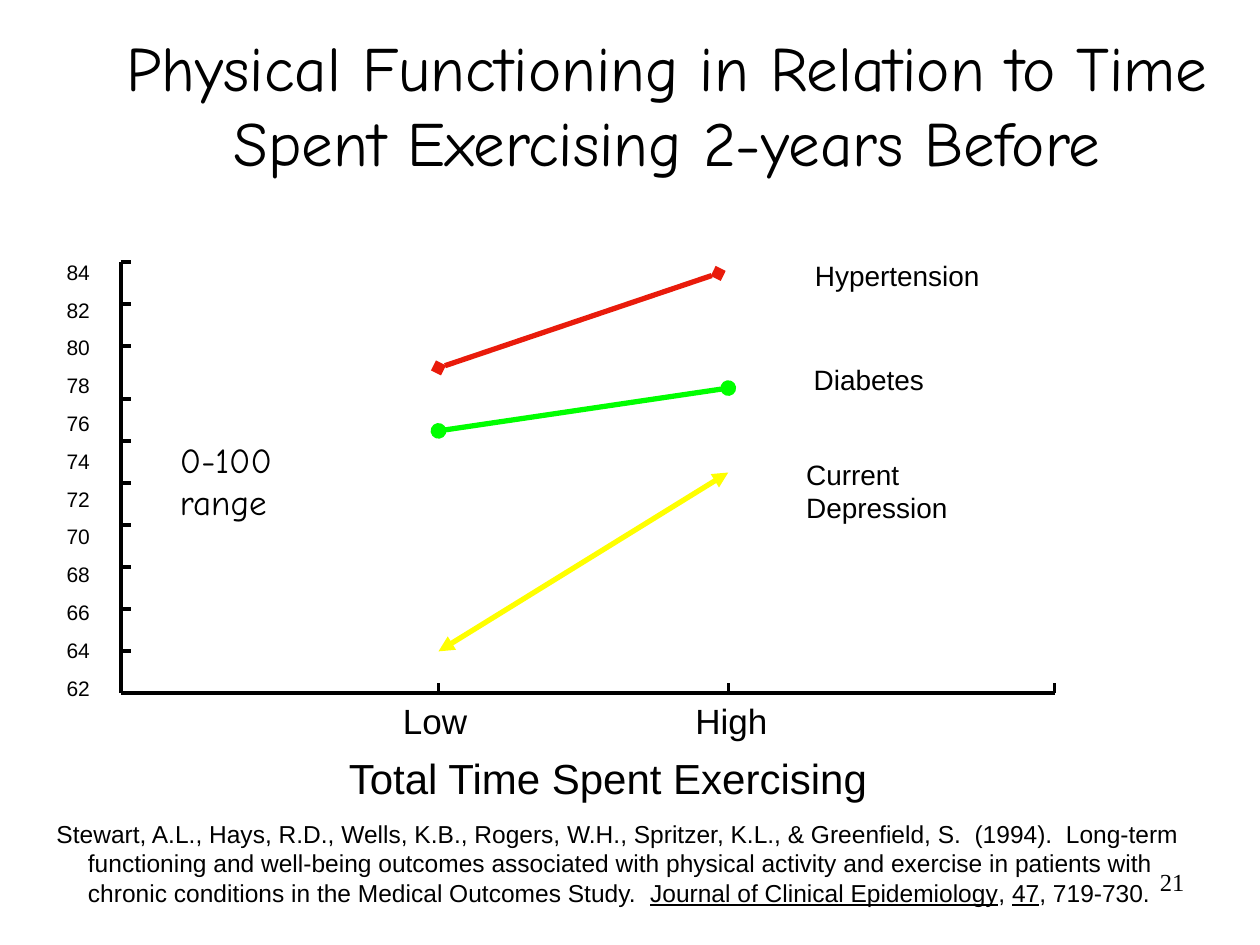
import pptx
import pptx.util
import pptx.dml.color
import pptx.enum.shapes
import pptx.enum.text
import pptx.oxml
import pptx.oxml.ns

Inches = pptx.util.Inches
Pt = pptx.util.Pt
ALIGN = pptx.enum.text.PP_ALIGN
ANCHOR = pptx.enum.text.MSO_ANCHOR

COLOURS = {
    "ink": "000000",
    "paper": "FFFFFF",
    "hypertension": "E91B0B",
    "diabetes": "00FF00",
    "depression": "FFFF00",
}

# Axis positions in inches
AXIS_LEFT, AXIS_RIGHT = 0.96, 8.37
AXIS_TOP, AXIS_BOTTOM = 2.08, 5.5
LOW, HIGH = 3.48, 5.78
TICK = 0.08
STEP = 1 / 3


def colour(name):
    return pptx.dml.color.RGBColor.from_string(COLOURS[name])


def write(box, paragraphs, size=16, font="Arial", align=ALIGN.LEFT, wrap=False,
          anchor=ANCHOR.TOP, spacing=None, hanging=0):
    """Fill a shape; each paragraph is a list of (text, underlined) spans."""
    frame = box.text_frame
    frame.word_wrap = wrap
    frame.vertical_anchor = anchor
    frame.auto_size = pptx.enum.text.MSO_AUTO_SIZE.NONE
    for index, spans in enumerate(paragraphs):
        para = frame.paragraphs[0] if index == 0 else frame.add_paragraph()
        para.alignment = align
        para.font.size = Pt(size)
        if spacing:
            para.line_spacing = spacing
        if hanging:
            properties = para._p.get_or_add_pPr()
            properties.set("marL", str(Inches(hanging)))
            properties.set("indent", str(-Inches(hanging)))
        for text, underlined in spans:
            for number, line in enumerate(text.split("\n")):
                if number:
                    para.add_line_break()
                if not line:
                    continue
                span = para.add_run()
                span.text = line
                span.font.size = Pt(size)
                span.font.name = font
                span.font.underline = underlined
                span.font.color.rgb = colour("ink")
        # Line breaks keep the height of the text around them
        for line_break in para._p.findall(pptx.oxml.ns.qn("a:br")):
            line_break.get_or_add_rPr().set("sz", str(size * 100)) if hasattr(
                line_break, "get_or_add_rPr") else line_break.append(
                pptx.oxml.parse_xml(
                    f'<a:rPr {pptx.oxml.ns.nsdecls("a")} sz="{size * 100}">'
                    f'<a:latin typeface="{font}"/></a:rPr>'))


def add_text(page, text, left, top, width, height, **style):
    box = page.shapes.add_textbox(
        Inches(left), Inches(top), Inches(width), Inches(height))
    paragraphs = [[(text, False)]] if isinstance(text, str) else text
    write(box, paragraphs, **style)


def add_line(page, start, end, name="ink", width=2, marker=None):
    line = page.shapes.add_connector(
        pptx.enum.shapes.MSO_CONNECTOR.STRAIGHT,
        *[Inches(value) for value in (*start, *end)])
    line.line.color.rgb = colour(name)
    line.line.width = Pt(width)
    namespace = pptx.oxml.ns.nsdecls("a")
    if marker:
        outline = line.line._get_or_add_ln()
        for tag in ("headEnd", "tailEnd"):
            outline.append(pptx.oxml.parse_xml(
                f'<a:{tag} {namespace} type="{marker}"/>'))
    line._element.spPr.append(pptx.oxml.parse_xml(f"<a:effectLst {namespace}/>"))


def add_title(page, text):
    title = page.shapes.title
    title.left, title.top = Inches(0.59), Inches(0.5)
    title.width, title.height = Inches(9.41), Inches(1.25)
    write(title, [[(text, False)]], size=36, font="Comic Neue",
          align=ALIGN.CENTER, anchor=ANCHOR.MIDDLE, wrap=True)


def add_axes(page):
    corner = (AXIS_LEFT, AXIS_BOTTOM)
    add_line(page, (AXIS_LEFT, AXIS_TOP), corner)
    add_line(page, corner, (AXIS_RIGHT, AXIS_BOTTOM))
    # Seven ticks rise from the bottom, three descend from the top
    ticks = [AXIS_BOTTOM - STEP * n for n in range(1, 8)]
    ticks += [AXIS_TOP + STEP * n for n in range(3)]
    for y in ticks:
        add_line(page, (AXIS_LEFT, y), (AXIS_LEFT + TICK, y))
    for x in (LOW, HIGH, AXIS_RIGHT):
        add_line(page, (x, AXIS_BOTTOM), (x, AXIS_BOTTOM - TICK))
    # Axis labels
    scale = [[(str(value), False)] for value in range(84, 60, -2)]
    add_text(page, scale, 0.43, 1.91, 0.39, 4.04, size=12, spacing=1.5)
    add_text(page, "Low", 3.1, 5.5, 0.76, 0.44, size=20)
    add_text(page, "High", 5.42, 5.5, 0.83, 0.44, size=20)
    add_text(page, "Total Time Spent Exercising", 2.67, 5.92, 4.68, 0.51, size=24)
    add_text(page, "0-100 range", 1.33, 3.43, 1.17, 0.77,
             size=20, font="Comic Neue", wrap=True)


def add_trends(page):
    trends = [
        ("hypertension", (LOW, 2.92), (5.7, 2.17), "diamond"),
        ("diabetes", (LOW, 3.42), (HIGH, 3.08), "oval"),
        ("depression", (LOW, 5.17), (HIGH, 3.75), "triangle"),
    ]
    for name, start, end, marker in trends:
        add_line(page, start, end, name, width=3, marker=marker)
    add_text(page, "Hypertension", 6.37, 2, 1.6, 0.36)
    add_text(page, "Diabetes", 6.36, 2.83, 1.11, 0.36)
    add_text(page, "Current Depression", 6.3, 3.58, 1.99, 0.63, wrap=True)


def add_citation(page):
    citation = [[
        ("Stewart, A.L., Hays, R.D., Wells, K.B., Rogers, W.H., Spritzer, K.L., "
         "& Greenfield, S.  (1994).  Long-term\n"
         "functioning and well-being outcomes associated with physical activity "
         "and exercise in patients with\n"
         "chronic conditions in the Medical Outcomes Study.  ", False),
        ("Journal of Clinical Epidemiology", True),
        (", ", False),
        ("47", True),
        (", 719-730.", False),
    ]]
    add_text(page, citation, 0.35, 6.45, 9.7, 0.81, size=14, hanging=0.25)


def main():
    deck = pptx.Presentation()
    deck.slide_width, deck.slide_height = Inches(10), Inches(7.5)
    page = deck.slides.add_slide(deck.slide_layouts[5])
    page.background.fill.solid()
    page.background.fill.fore_color.rgb = colour("paper")

    add_title(page, "Physical Functioning in Relation to Time\n"
                    "Spent Exercising 2-years Before\n")
    add_axes(page)
    add_trends(page)
    add_citation(page)
    # Page number
    add_text(page, "21", 7.17, 6.83, 2.33, 0.52, size=14,
             font="Times New Roman", align=ALIGN.RIGHT, wrap=True)
    deck.save("out.pptx")


if __name__ == "__main__":
    main()
